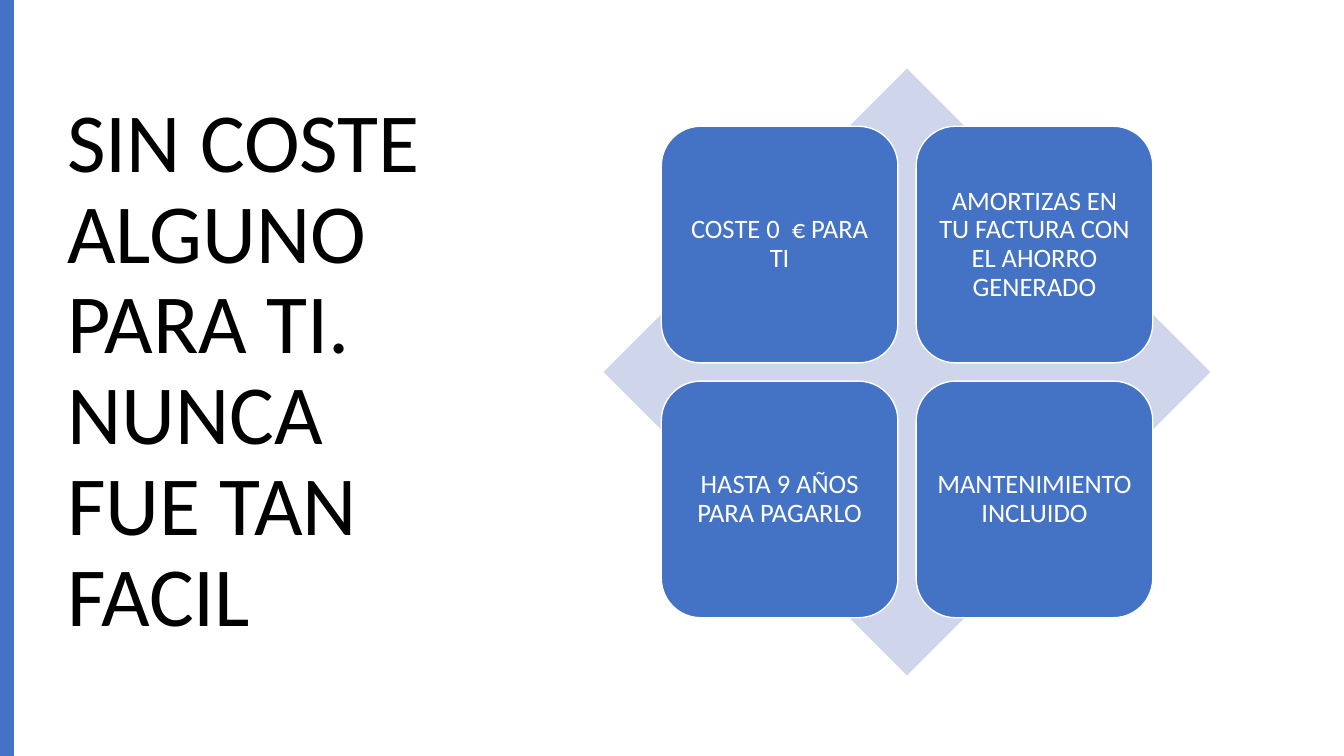
from dataclasses import dataclass

from pptx import Presentation
from pptx.dml.color import RGBColor
from pptx.enum.shapes import MSO_SHAPE
from pptx.enum.text import MSO_ANCHOR, PP_ALIGN
from pptx.shapes.autoshape import Shape
from pptx.slide import Slide
from pptx.util import Pt


@dataclass(frozen=True)
class Theme:
    font: str = "Calibri"
    title_size: float = 60
    tile_size: float = 19
    line_spacing: float = 0.9
    accent: RGBColor = RGBColor(0x44, 0x72, 0xC4)
    pale: RGBColor = RGBColor(0xCF, 0xD5, 0xEA)
    dark: RGBColor = RGBColor(0, 0, 0)
    light: RGBColor = RGBColor(0xFF, 0xFF, 0xFF)


@dataclass(frozen=True)
class Box:
    left: float
    top: float
    width: float
    height: float

    def lengths(self) -> tuple[Pt, Pt, Pt, Pt]:
        return Pt(self.left), Pt(self.top), Pt(self.width), Pt(self.height)


@dataclass(frozen=True)
class Benefit:
    column: int
    row: int
    text: str


THEME = Theme()
SLIDE_WIDTH, SLIDE_HEIGHT = 960, 540
STRIPE = Box(0, 0, 10, SLIDE_HEIGHT)
TITLE = Box(41, 49, 299.5, 433.4)
DIAMOND = Box(431.2, 49, 433.4, 433.4)
TILE_SIDE = 0.39 * DIAMOND.width
TILE_GAP = 0.03 * DIAMOND.width
TILE_OFFSET = (DIAMOND.width - 2 * TILE_SIDE - TILE_GAP) / 2
TILE_MARGIN = 5.7

HEADLINE = "SIN COSTE ALGUNO PARA TI. NUNCA FUE TAN FACIL"
BENEFITS = (
    Benefit(0, 0, "COSTE 0  € PARA TI"),
    Benefit(1, 0, "AMORTIZAS EN TU FACTURA CON EL AHORRO GENERADO"),
    Benefit(0, 1, "HASTA 9 AÑOS PARA PAGARLO"),
    Benefit(1, 1, "MANTENIMIENTO INCLUIDO"),
)


def add_filled(slide: Slide, kind: MSO_SHAPE, box: Box, color: RGBColor) -> Shape:
    shape = slide.shapes.add_shape(kind, *box.lengths())
    shape.shadow.inherit = False
    shape.fill.solid()
    shape.fill.fore_color.rgb = color
    shape.line.fill.background()
    return shape


def write(shape: Shape, text: str, size: float, color: RGBColor, align: PP_ALIGN) -> None:
    frame = shape.text_frame
    frame.word_wrap = True
    frame.vertical_anchor = MSO_ANCHOR.MIDDLE
    paragraph = frame.paragraphs[0]
    paragraph.text = text
    paragraph.alignment = align
    paragraph.line_spacing = THEME.line_spacing
    paragraph.font.name = THEME.font
    paragraph.font.size = Pt(size)
    paragraph.font.color.rgb = color


def add_benefit(slide: Slide, benefit: Benefit) -> None:
    pitch = TILE_SIDE + TILE_GAP
    box = Box(
        DIAMOND.left + TILE_OFFSET + benefit.column * pitch,
        DIAMOND.top + TILE_OFFSET + benefit.row * pitch,
        TILE_SIDE,
        TILE_SIDE,
    )
    tile = add_filled(slide, MSO_SHAPE.ROUNDED_RECTANGLE, box, THEME.accent)
    tile.line.color.rgb = THEME.light
    tile.line.width = Pt(1)
    frame = tile.text_frame
    frame.margin_left = frame.margin_right = Pt(TILE_MARGIN)
    frame.margin_top = frame.margin_bottom = Pt(TILE_MARGIN)
    write(tile, benefit.text, THEME.tile_size, THEME.light, PP_ALIGN.CENTER)


def main() -> None:
    presentation = Presentation()
    presentation.slide_width = Pt(SLIDE_WIDTH)
    presentation.slide_height = Pt(SLIDE_HEIGHT)
    slide = presentation.slides.add_slide(presentation.slide_layouts[6])

    headline = slide.shapes.add_textbox(*TITLE.lengths())
    write(headline, HEADLINE, THEME.title_size, THEME.dark, PP_ALIGN.LEFT)
    add_filled(slide, MSO_SHAPE.RECTANGLE, STRIPE, THEME.accent)
    add_filled(slide, MSO_SHAPE.DIAMOND, DIAMOND, THEME.pale)
    for benefit in BENEFITS:
        add_benefit(slide, benefit)

    presentation.save("out.pptx")


if __name__ == "__main__":
    main()
